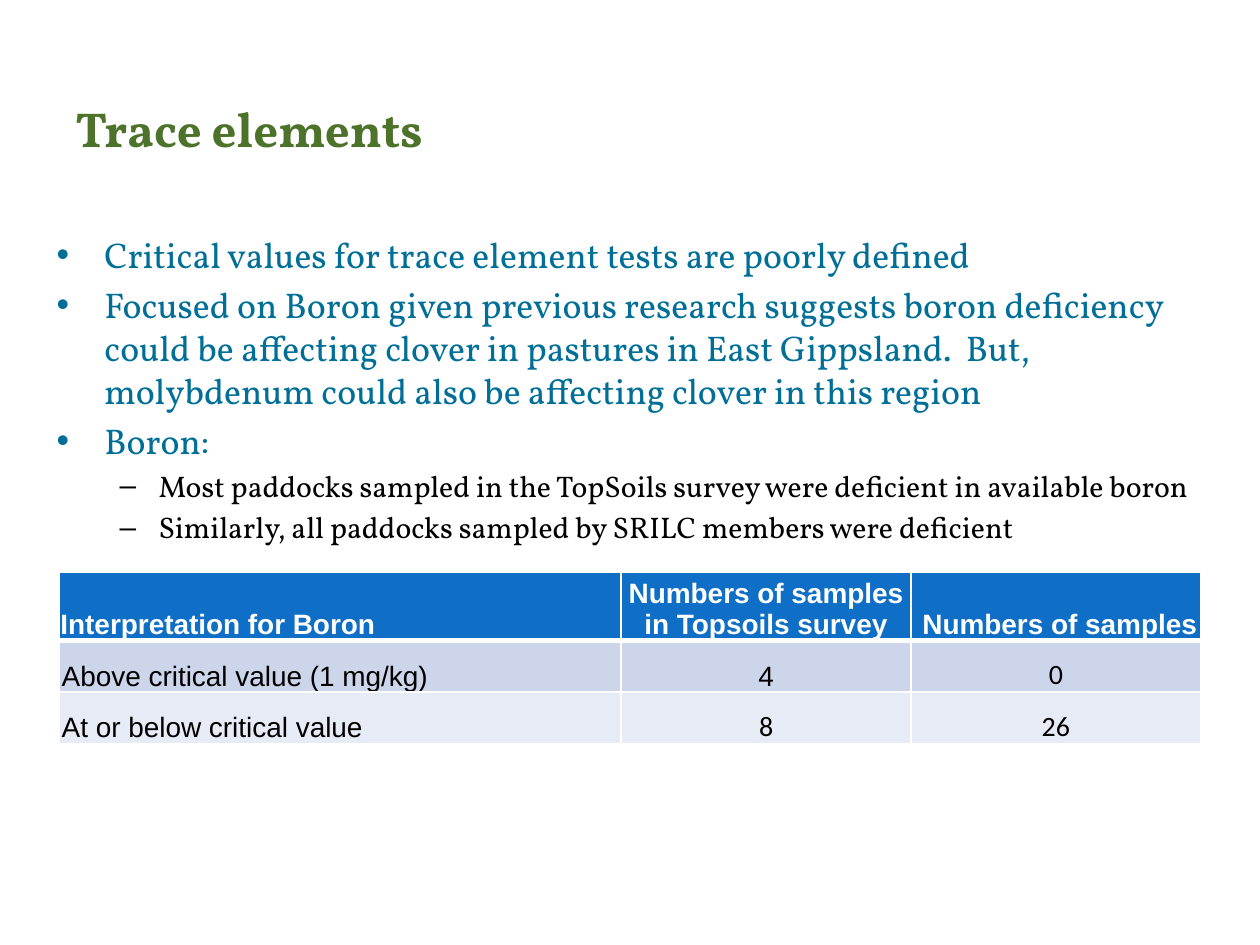
import pptx
import pptx.util
import pptx.dml.color
import pptx.enum.text
import pptx.oxml
import pptx.oxml.ns
import lxml.etree

Inches, Pt = pptx.util.Inches, pptx.util.Pt
ALIGN = pptx.enum.text.PP_ALIGN
ANCHOR = pptx.enum.text.MSO_ANCHOR

TITLE = "Trace elements"
POINTS = [
    (0, "Critical values for trace element tests are poorly defined"),
    (0, "Focused on Boron given previous research suggests boron deficiency "
        "could be affecting clover in pastures in East Gippsland.  But, "
        "molybdenum could also be affecting clover in this region"),
    (0, "Boron:"),
    (1, "Most paddocks sampled in the TopSoils survey were deficient in available boron"),
    (1, "Similarly, all paddocks sampled by SRILC members were deficient"),
]
BORON_ROWS = [
    ("Interpretation for Boron", "Numbers of samples in Topsoils survey", " Numbers of samples"),
    ("Above critical value (1 mg/kg)", "4", "0"),
    ("At or below critical value", "8", "26"),
]
CALIBRI_CELLS = {(1, 2), (2, 1), (2, 2)}
COLUMN_WIDTHS = [4.46, 2.3, 2.3]
ROW_HEIGHTS = [0.5, 0.41, 0.41]

THEME = {
    "title": {"name": "Vollkorn", "size": 28, "bold": True, "color": "4C7329"},
    "levels": [
        {"name": "Vollkorn", "size": 20.4, "color": "006F97"},
        {"name": "Vollkorn", "size": 17, "color": "000000"},
    ],
    "header": {"name": "Arial", "size": 16, "bold": True, "color": "FFFFFF"},
    "cell": {"name": "Arial", "size": 16, "bold": False, "color": "000000"},
    "row_fills": ["0F6FC6", "CCD5EA", "E7EBF5"],
    "border": "FFFFFF",
}
BULLETS = [("•", 0.38, -0.38), ("–", 0.81, -0.31)]


def rgb(value):
    return pptx.dml.color.RGBColor.from_string(value)


def set_font(font, style):
    for attribute, value in style.items():
        if attribute == "color":
            font.color.rgb = rgb(value)
        else:
            setattr(font, attribute, Pt(value) if attribute == "size" else value)


def add_text_frame(slide, left, top, width, height):
    box = slide.shapes.add_textbox(*map(Inches, (left, top, width, height)))
    box.text_frame.word_wrap = True
    return box.text_frame


def add_bullet(paragraph, mark, margin, indent):
    properties = paragraph._p.get_or_add_pPr()
    properties.set("marL", str(Inches(margin)))
    properties.set("indent", str(Inches(indent)))
    for tag, attribute, value in (("a:buFont", "typeface", "Arial"), ("a:buChar", "char", mark)):
        lxml.etree.SubElement(properties, pptx.oxml.ns.qn(tag)).set(attribute, value)


def set_borders(cell, bottom_width):
    properties = cell._tc.get_or_add_tcPr()
    widths = {"lnL": 1, "lnR": 1, "lnT": 1, "lnB": bottom_width}
    for position, (side, width) in enumerate(widths.items()):
        properties.insert(position, pptx.oxml.parse_xml(
            f'<a:{side} {pptx.oxml.ns.nsdecls("a")} w="{Pt(width)}"><a:solidFill>'
            f'<a:srgbClr val="{THEME["border"]}"/></a:solidFill></a:{side}>'))


def add_title(slide):
    frame = add_text_frame(slide, 0.5, 0.48, 9, 1.07)
    frame.vertical_anchor = ANCHOR.MIDDLE
    frame.text = TITLE
    set_font(frame.paragraphs[0].font, THEME["title"])


def add_points(slide):
    frame = add_text_frame(slide, 0.35, 1.8, 9.29, 2.42)
    for index, (level, text) in enumerate(POINTS):
        paragraph = frame.add_paragraph() if index else frame.paragraphs[0]
        paragraph.text = text
        paragraph.level = level
        style = THEME["levels"][level]
        if index:
            paragraph.space_before = Pt(round(style["size"] * 0.2, 1))
        add_bullet(paragraph, *BULLETS[level])
        set_font(paragraph.font, style)


def add_boron_table(slide):
    table = slide.shapes.add_table(
        len(BORON_ROWS), len(COLUMN_WIDTHS), Inches(0.47), Inches(4.54),
        Inches(sum(COLUMN_WIDTHS)), Inches(sum(ROW_HEIGHTS))).table
    for column, width in zip(table.columns, COLUMN_WIDTHS):
        column.width = Inches(width)
    for r, values in enumerate(BORON_ROWS):
        table.rows[r].height = Inches(ROW_HEIGHTS[r])
        side_margin = Inches(0.02 if r else 0.01)
        cell_format = {
            "vertical_anchor": ANCHOR.BOTTOM, "margin_left": side_margin,
            "margin_right": side_margin, "margin_top": Inches(0.01), "margin_bottom": 0,
        }
        for c, value in enumerate(values):
            cell = table.cell(r, c)
            cell.text = value
            for attribute, setting in cell_format.items():
                setattr(cell, attribute, setting)
            cell.fill.solid()
            cell.fill.fore_color.rgb = rgb(THEME["row_fills"][r])
            set_borders(cell, 1 if r else 3)
            paragraph = cell.text_frame.paragraphs[0]
            paragraph.alignment = ALIGN.CENTER if c else ALIGN.LEFT
            font = paragraph.runs[0].font
            set_font(font, THEME["cell" if r else "header"])
            if (r, c) in CALIBRI_CELLS:
                font.name = "Calibri"


def main():
    deck = pptx.Presentation()
    deck.slide_width, deck.slide_height = Inches(10), Inches(7.5)
    slide = deck.slides.add_slide(deck.slide_layouts[6])
    add_title(slide)
    add_boron_table(slide)
    add_points(slide)
    deck.save("out.pptx")


if __name__ == "__main__":
    main()
